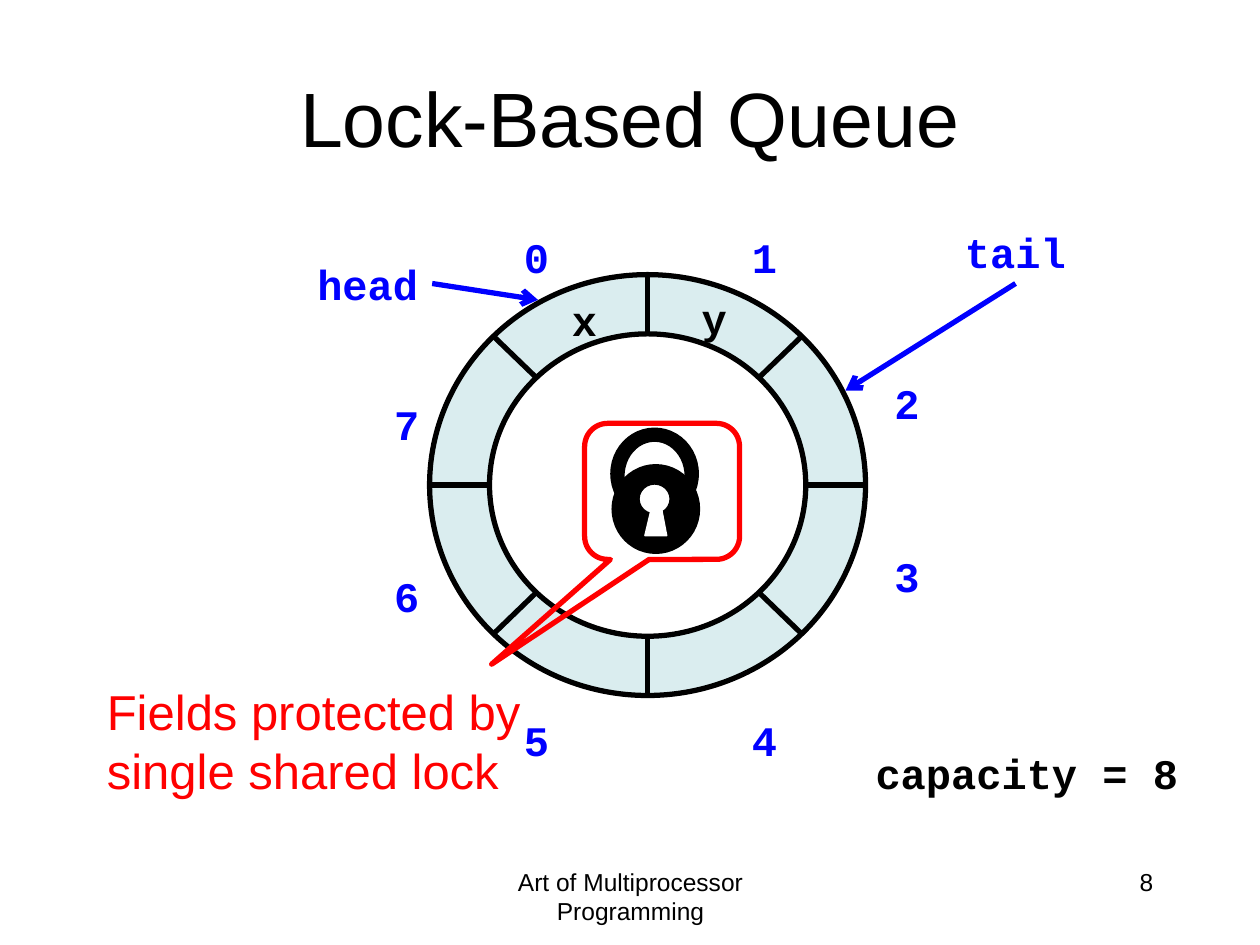
import math

import pptx
import pptx.dml.color
import pptx.enum.shapes
import pptx.enum.text
import pptx.oxml
import pptx.oxml.ns
import pptx.util

COLORS = {"ink": "000000", "paper": "FFFFFF", "ring": "DAEDEF",
          "label": "0000FF", "note": "FF0000"}
CELL = 0.1  # inches: the slide is a grid of 100 columns by 75 rows
SHAPE = pptx.enum.shapes.MSO_SHAPE
ALIGN = pptx.enum.text.PP_ALIGN
CENTER = (51.4, 38.5)
RING = (17.3, 16.7)
HOLE = (12.55, 12)


def grid(*cells):
    return [pptx.util.Inches(c * CELL) for c in cells]


def rgb(name):
    return pptx.dml.color.RGBColor.from_string(COLORS[name])


def add_text(s, text, box, size=24, font="Courier New", color="ink", bold=False,
             align=ALIGN.LEFT, anchor=pptx.enum.text.MSO_ANCHOR.TOP, wrap=True):
    tf = s.shapes.add_textbox(*grid(*box)).text_frame
    tf.word_wrap = wrap
    tf.vertical_anchor = anchor
    p = tf.paragraphs[0]
    p.alignment = align
    r = p.add_run()
    r.text = text
    r.font.size = pptx.util.Pt(size)
    r.font.name = font
    r.font.bold = bold
    r.font.color.rgb = rgb(color)


def add_code(s, text, col, row, color="label"):
    """Bold monospaced label, as wide as its characters."""
    add_text(s, text, (col, row, 2 + 2.03 * len(text), 5),
             color=color, bold=True, wrap=False)


def paint(sp, fill, line, width):
    sp.shadow.inherit = False
    if fill:
        sp.fill.solid()
        sp.fill.fore_color.rgb = rgb(fill)
    else:
        sp.fill.background()
    sp.line.color.rgb = rgb(line)
    sp.line.width = pptx.util.Pt(width)


def add_preset(s, kind, box, fill=None, line="ink", width=1):
    sp = s.shapes.add_shape(kind, *grid(*box))
    paint(sp, fill, line, width)
    return sp


def add_line(s, start, end, color="ink", arrow=False):
    line = s.shapes.add_connector(
        pptx.enum.shapes.MSO_CONNECTOR.STRAIGHT, *grid(*start, *end))
    line.line.color.rgb = rgb(color)
    line.line.width = pptx.util.Pt(3)
    if arrow:
        ln = line.line._get_or_add_ln()
        ln.append(pptx.oxml.parse_xml(
            f'<a:tailEnd {pptx.oxml.ns.nsdecls("a")} type="arrow"/>'))
    line._element.spPr.append(pptx.oxml.parse_xml(
        f'<a:effectLst {pptx.oxml.ns.nsdecls("a")}/>'))


def add_disc(s, radii, fill):
    (cx, cy), (rx, ry) = CENTER, radii
    add_preset(s, SHAPE.OVAL, (cx - rx, cy - ry, 2 * rx, 2 * ry), fill, width=3)


def add_ring(s):
    """Ring buffer of eight slots: a disc, four diameters and a hole."""
    add_disc(s, RING, "ring")
    (cx, cy), (rx, ry) = CENTER, RING
    for k in range(4):
        dx = rx * math.cos(k * math.pi / 4)
        dy = ry * math.sin(k * math.pi / 4)
        add_line(s, (cx - dx, cy - dy), (cx + dx, cy + dy))
    add_disc(s, HOLE, "paper")


def add_lock(s):
    for box, fill, line in [
        ((46.5, 33.1, 10.9, 11.7), "paper", "paper"),
        ((48.5, 34, 6.9, 7.2), "ink", "ink"),
        ((49.5, 35, 4.9, 5.6), "paper", "ink"),
        ((48.6, 36.9, 6.9, 7), "ink", "ink"),
        ((50.7, 38.4, 2.5, 2.4), "paper", "ink"),
    ]:
        add_preset(s, SHAPE.OVAL, box, fill, line)
    first, *rest = [tuple(grid(*pt)) for pt in
                    [(51.2, 42.5), (51.7, 40.4), (52.5, 40.4), (52.9, 42.5)]]
    builder = s.shapes.build_freeform(*first)
    builder.add_line_segments(rest, close=True)
    paint(builder.convert_to_shape(), "paper", "paper", 1)


def add_callout(s):
    sp = add_preset(s, SHAPE.ROUNDED_RECTANGULAR_CALLOUT,
                    (46.4, 33.6, 12.3, 10.8), line="note", width=3)
    for i, value in enumerate((-1.1, 1.27, 0.17)):
        sp.adjustments[i] = value


def main():
    prs = pptx.Presentation()
    prs.slide_width, prs.slide_height = grid(100, 75)
    s = prs.slides.add_slide(prs.slide_layouts[6])

    add_ring(s)
    add_text(s, "Art of Multiprocessor Programming", (34.2, 68.3, 31.7, 5),
             size=14, font="Arial", align=ALIGN.CENTER)
    add_text(s, "8", (71.7, 68.3, 20.8, 5), size=14, font="Arial", align=ALIGN.RIGHT)
    add_text(s, "Lock-Based Queue", (5, 3, 90, 12.5), size=44, font="Arial",
             align=ALIGN.CENTER, anchor=pptx.enum.text.MSO_ANCHOR.MIDDLE)

    add_code(s, "head", 24.2, 20)
    add_line(s, (34.3, 22.5), (42.7, 23.8), "label", arrow=True)
    add_code(s, "tail", 75.6, 17.5)
    add_line(s, (80.6, 22.5), (67.1, 31), "label", arrow=True)

    slots = [(40.6, 17.9), (58.7, 17.9), (70, 29.5), (70, 43.2),
             (58.7, 56.2), (40.6, 56.2), (30.3, 44.8), (30.3, 31.1)]
    for number, (col, row) in enumerate(slots):
        add_code(s, str(number), col, row)
    add_code(s, "capacity = 8", 68.5, 58.8, "ink")

    add_lock(s)
    add_callout(s)
    add_text(s, "Fields protected by single shared lock", (7.5, 53.6, 43.1, 10.4),
             size=28, font="Arial", color="note")
    add_code(s, "y", 54.7, 22.7, "ink")
    add_code(s, "x", 44.4, 22.9, "ink")

    prs.save("out.pptx")


if __name__ == "__main__":
    main()
